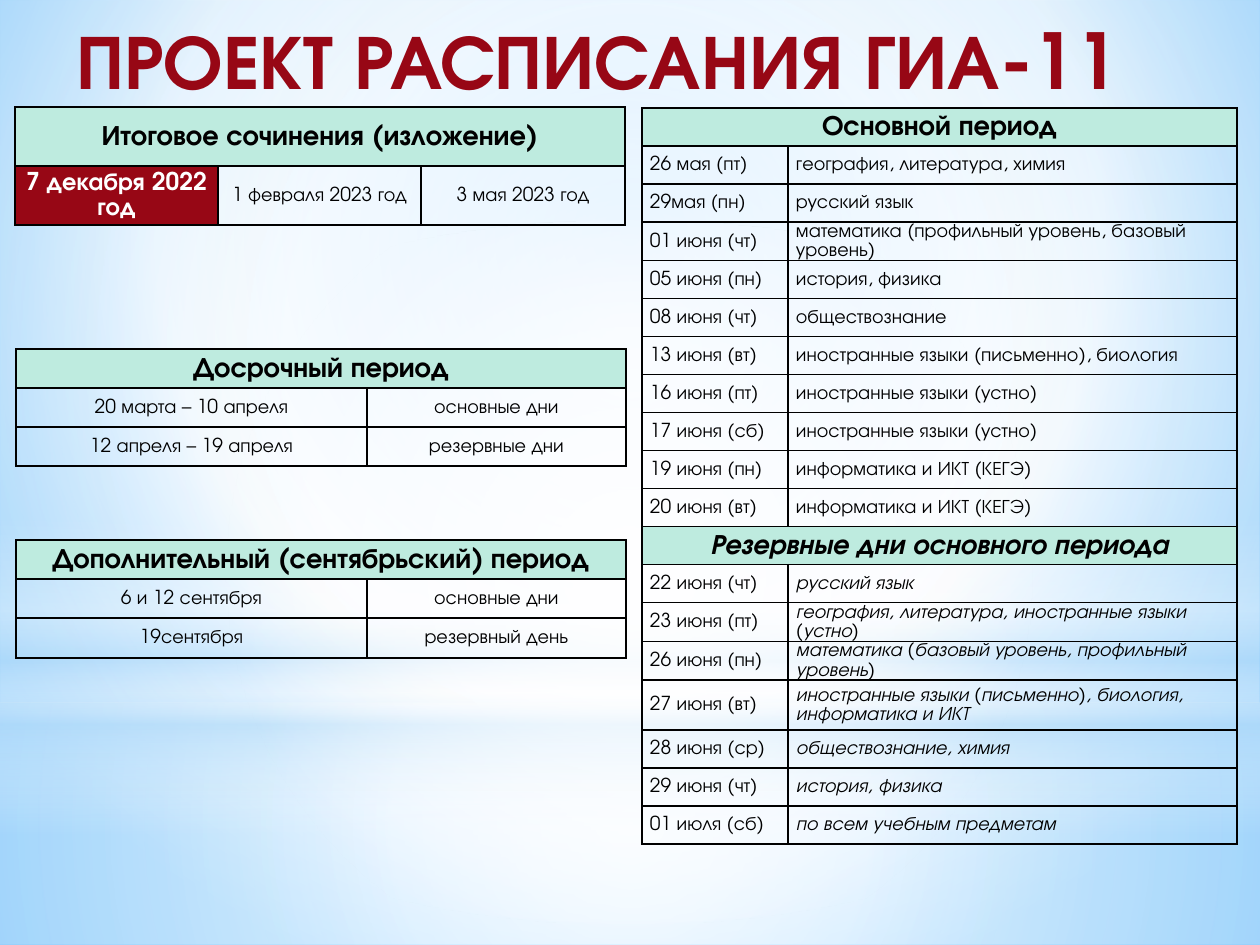
"""Build the slide with the draft timetable of the final state exams."""
from lxml.etree import SubElement, fromstring
from pptx import Presentation
from pptx.dml.color import RGBColor
from pptx.enum.shapes import MSO_SHAPE
from pptx.enum.text import MSO_ANCHOR, MSO_AUTO_SIZE, PP_ALIGN
from pptx.oxml.ns import nsdecls, qn
from pptx.util import Emu, Pt

PX = 914400 / 126
FONT = "TeX Gyre Adventor"
COLORS = {"mint": "BEEBDF", "red": "970715", "black": "000000", "white": "FFFFFF",
          "haze": "B4DCFA", "sky": "9ED5FF", "deep": "5BB9FF"}


def px(*lengths):
    return [Emu(round(length * PX)) for length in lengths]


def paint(owner, stops, focus):
    """Replace the first solid fill by a gradient; focus None means top to bottom."""
    gradient = fromstring(f'<a:gradFill {nsdecls("a")} rotWithShape="1"><a:gsLst/></a:gradFill>')
    for position, color, opacity in stops:
        stop = SubElement(gradient[0], qn("a:gs"), pos=str(position * 1000))
        tone = SubElement(stop, qn("a:srgbClr"), val=COLORS[color])
        if opacity < 100:
            SubElement(tone, qn("a:alpha"), val=str(opacity * 1000))
    if focus:
        path = SubElement(gradient, qn("a:path"), path="circle")
        sides = {side: str(value * 1000) for side, value in zip("ltrb", focus)}
        SubElement(path, qn("a:fillToRect"), **sides)
    else:
        SubElement(gradient, qn("a:lin"), ang="5400000", scaled="0")
    solid = owner.find(".//" + qn("a:solidFill"))
    solid.getparent().replace(solid, gradient)


presentation = Presentation()
presentation.slide_width, presentation.slide_height = px(1260, 945)
slide = presentation.slides.add_slide(presentation.slide_layouts[6])
slide.background.fill.solid()
paint(slide.element, [(0, "sky", 100), (60, "white", 100), (100, "deep", 100)],
      (20, 10, 20, 60))

center = (50, 50, 50, 50)
glows = [
    (MSO_SHAPE.RECTANGLE, 703, 242, center,
     [(0, "white", 91), (37, "white", 76), (100, "haze", 79)]),
    (MSO_SHAPE.RECTANGLE, 0, 703, center,
     [(0, "white", 89), (48, "white", 62), (100, "haze", 79)]),
    (MSO_SHAPE.RECTANGLE, 519, 315, None,
     [(0, "white", 0), (29, "white", 30), (45, "haze", 40),
      (55, "white", 26), (65, "haze", 60), (100, "white", 0)]),
    (MSO_SHAPE.OVAL, 221, 703, center, [(0, "white", 100), (56, "white", 0)]),
]
for outline, top, height, focus, stops in glows:
    glow = slide.shapes.add_shape(outline, *px(0, top, 1260, height))
    glow.shadow.inherit = False
    glow.line.fill.background()
    glow.fill.solid()
    paint(glow.element, stops, focus)

main_period = [
    ("Основной период",),
    ("26 мая (пт)", "география, литература, химия"),
    ("29мая (пн)", "русский язык"),
    ("01 июня (чт)", "математика (профильный уровень, базовый уровень)"),
    ("05 июня (пн)", "история, физика"),
    ("08 июня (чт)", "обществознание"),
    ("13 июня (вт)", "иностранные языки (письменно), биология"),
    ("16 июня (пт)", "иностранные языки (устно)"),
    ("17 июня (сб)", "иностранные языки (устно)"),
    ("19 июня (пн)", "информатика и ИКТ (КЕГЭ)"),
    ("20 июня (вт)", "информатика и ИКТ (КЕГЭ)"),
    ("Резервные дни основного периода",),
    ("22 июня (чт)", "русский язык"),
    ("23 июня (пт)", "география, литература, иностранные языки (устно)"),
    ("26 июня (пн)", "математика (базовый уровень, профильный уровень)"),
    ("27 июня (вт)", "иностранные языки (письменно), биология, информатика и ИКТ"),
    ("28 июня (ср)", "обществознание, химия"),
    ("29 июня (чт)", "история, физика"),
    ("01 июля (сб)", "по всем учебным предметам"),
]
essay = [("Итоговое сочинения (изложение)",),
         ("7 декабря 2022 год", "1 февраля 2023 год", "3 мая 2023 год")]
early_period = [("Досрочный период",),
                ("20 марта – 10 апреля", "основные дни"),
                ("12 апреля – 19 апреля", "резервные дни")]
extra_period = [("Дополнительный (сентябрьский) период",),
                ("6 и 12 сентября", "основные дни"),
                ("19сентября", "резервный день")]
RESERVE_START = 11
schedules = [
    (main_period, 642, 108, [146, 449], [38] * 15 + [50] + [38] * 3),
    (essay, 15, 107, [203, 203, 204], [59, 59]),
    (early_period, 16, 349, [351, 259], [39, 39, 39]),
    (extra_period, 16, 540, [351, 259], [39, 39, 40]),
]
for entries, left, top, widths, heights in schedules:
    frame = slide.shapes.add_table(len(heights), len(widths),
                                   *px(left, top, sum(widths), sum(heights)))
    schedule = frame.table
    schedule.first_row = schedule.horz_banding = False
    for column, width in zip(schedule.columns, px(*widths)):
        column.width = width
    for row, height in zip(schedule.rows, px(*heights)):
        row.height = height
    for row_index, entry in enumerate(entries):
        heading = len(entry) == 1
        if heading:
            schedule.cell(row_index, 0).merge(schedule.cell(row_index, len(widths) - 1))
        for column_index in range(len(widths)):
            cell = schedule.cell(row_index, column_index)
            chosen_day = entries is essay and not heading and column_index == 0
            reserve = entries is main_period and row_index >= RESERVE_START
            cell.vertical_anchor = MSO_ANCHOR.MIDDLE
            cell.margin_left, cell.margin_right, cell.margin_top, cell.margin_bottom = px(8, 8, 0, 0)
            if heading or chosen_day:
                cell.fill.solid()
                cell.fill.fore_color.rgb = RGBColor.from_string(
                    COLORS["mint" if heading else "red"])
            else:
                cell.fill.background()
            properties = cell._tc.get_or_add_tcPr()
            for order, side in enumerate(("lnL", "lnR", "lnT", "lnB")):
                properties.insert(order, fromstring(
                    f'<a:{side} {nsdecls("a")} w="12700"><a:solidFill>'
                    f'<a:srgbClr val="{COLORS["black"]}"/></a:solidFill></a:{side}>'))
            if column_index >= len(entry):
                continue
            cell.text = entry[column_index]
            paragraph = cell.text_frame.paragraphs[0]
            centered = heading or entries is not main_period
            paragraph.alignment = PP_ALIGN.CENTER if centered else PP_ALIGN.LEFT
            paragraph.line_spacing = 1.07
            paragraph.font.name = FONT
            paragraph.font.size = Pt(16 if heading else 14 if chosen_day else 11)
            paragraph.font.bold = heading or chosen_day
            paragraph.font.italic = reserve and (heading or column_index == 1)
            paragraph.font.color.rgb = RGBColor.from_string(
                COLORS["white" if chosen_day else "black"])

title = slide.shapes.add_textbox(*px(64, 6, 1155, 106)).text_frame
title.word_wrap = False
title.auto_size = MSO_AUTO_SIZE.SHAPE_TO_FIT_TEXT
title.text = "ПРОЕКТ РАСПИСАНИЯ ГИА-11"
headline = title.paragraphs[0]
headline.font.name = FONT
headline.font.size = Pt(44)
headline.font.bold = True
headline.font.color.rgb = RGBColor.from_string(COLORS["red"])

presentation.save("out.pptx")
